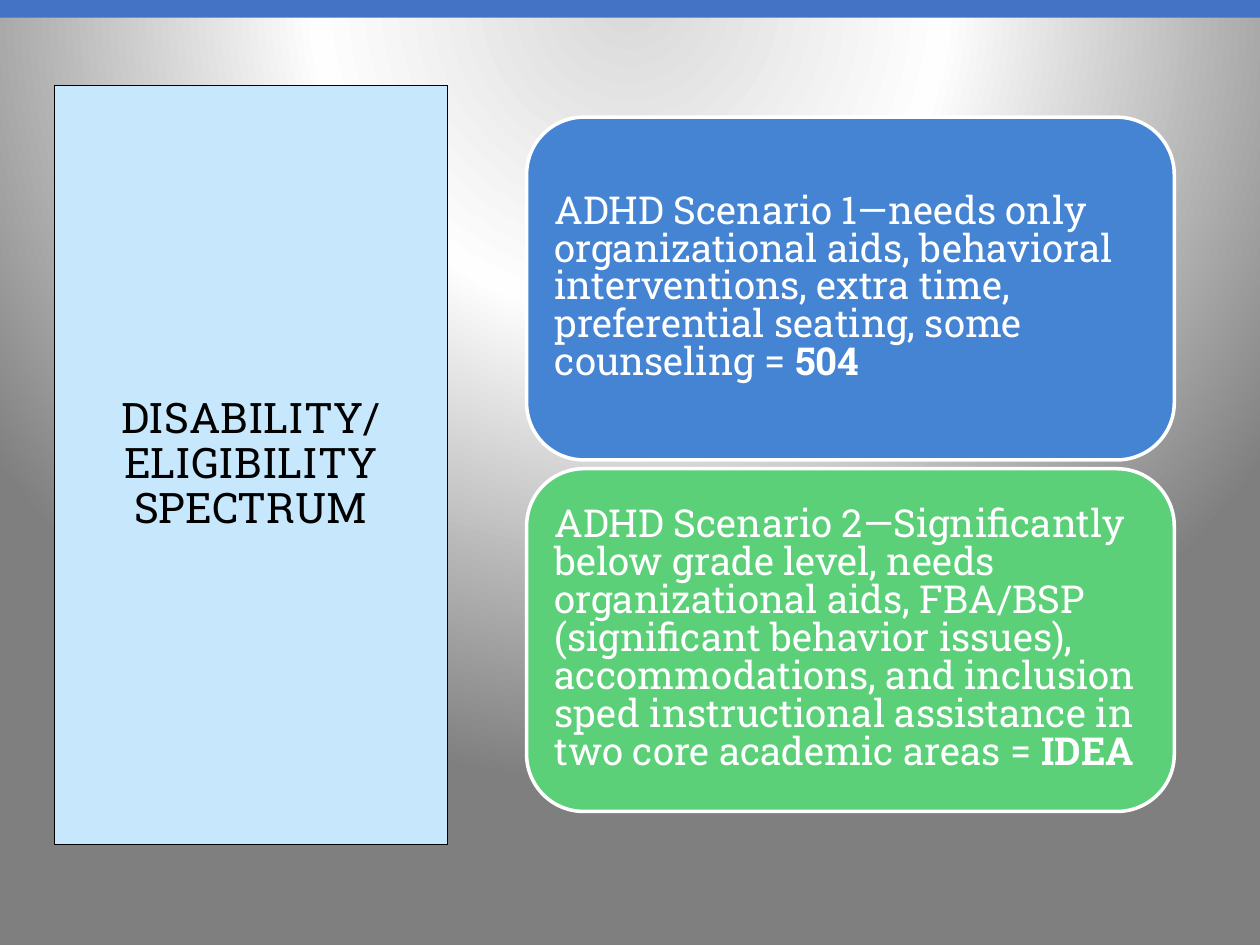
import pptx
import pptx.util
import pptx.dml.color
import pptx.enum.shapes
import pptx.enum.text
import pptx.oxml
from pptx.util import Inches

RGBColor = pptx.dml.color.RGBColor
BLACK = RGBColor(0x00, 0x00, 0x00)
WHITE = RGBColor(0xFF, 0xFF, 0xFF)
PALE_BLUE = RGBColor(0xC6, 0xE7, 0xFC)
BAR_BLUE = RGBColor(0x44, 0x72, 0xC4)
CARD_BLUE = RGBColor(0x45, 0x84, 0xD3)
CARD_GREEN = RGBColor(0x5B, 0xD0, 0x78)
GRADIENT = [(0, RGBColor(0xD9, 0xD9, 0xD9)), (40, RGBColor(0xFE, 0xFE, 0xFE)),
            (100, RGBColor(0x7F, 0x7F, 0x7F))]

SHAPES = pptx.enum.shapes.MSO_SHAPE
ALIGN = pptx.enum.text.PP_ALIGN
ANCHOR = pptx.enum.text.MSO_ANCHOR
AUTO_SIZE = pptx.enum.text.MSO_AUTO_SIZE

CARD_TOP, CARD_PITCH = 0.93, 2.79
CARDS = [
    (CARD_BLUE, "ADHD Scenario 1—needs only organizational aids, behavioral "
     "interventions, extra time, preferential seating, some counseling = ", "504"),
    (CARD_GREEN, "ADHD Scenario 2—Significantly below grade level, needs "
     "organizational aids, FBA/BSP (significant behavior issues), accommodations, "
     "and inclusion sped instructional assistance in two core academic areas = ",
     "IDEA"),
]


def apply(target, formats):
    for name, value in formats.items():
        setattr(target, name, value)


class SlideBuilder:
    font = "Roboto Slab"
    frame = {"word_wrap": True, "auto_size": AUTO_SIZE.NONE,
             "vertical_anchor": ANCHOR.MIDDLE,
             "margin_left": Inches(0.09), "margin_right": Inches(0.09),
             "margin_top": Inches(0.09), "margin_bottom": Inches(0.09)}

    def __init__(self, s):
        self.s = s

    def background(self, stops):
        gs = "".join(f'<a:gs pos="{pos * 1000}"><a:srgbClr val="{color}"/></a:gs>'
                     for pos, color in stops)
        bg = pptx.oxml.parse_xml(
            '<p:bg xmlns:p="http://schemas.openxmlformats.org/presentationml/2006/main" '
            'xmlns:a="http://schemas.openxmlformats.org/drawingml/2006/main">'
            f'<p:bgPr><a:gradFill rotWithShape="1"><a:gsLst>{gs}</a:gsLst>'
            '<a:path path="circle"><a:fillToRect l="50000" t="-80000" r="50000" '
            'b="180000"/></a:path></a:gradFill><a:effectLst/></p:bgPr></p:bg>')
        self.s.element.cSld.insert(0, bg)

    def paint(self, sp, fill, line=None, width=0):
        sp.fill.solid()
        sp.fill.fore_color.rgb = fill
        if line is None:
            sp.line.fill.background()
        else:
            sp.line.color.rgb = line
            sp.line.width = pptx.util.Pt(width)

    def shape(self, kind, box, fill, line=None, width=0):
        sp = self.s.shapes.add_shape(kind, *map(Inches, box))
        sp.shadow.inherit = False
        self.paint(sp, fill, line, width)
        return sp

    def run(self, p, text, size, color, bold=False):
        r = p.add_run()
        r.text = text
        apply(r.font, {"name": self.font, "size": pptx.util.Pt(size), "bold": bold})
        r.font.color.rgb = color

    def title(self, box, lines):
        sp = self.s.shapes.title
        apply(sp, dict(zip(("left", "top", "width", "height"), map(Inches, box))))
        self.paint(sp, PALE_BLUE, BLACK, 0.75)
        apply(sp.text_frame, self.frame)
        p = sp.text_frame.paragraphs[0]
        apply(p, {"alignment": ALIGN.CENTER, "line_spacing": 0.9})
        for i, line in enumerate(lines):
            if i:
                p.add_line_break()
            self.run(p, line, 24, BLACK)

    def card(self, box, fill, text, result):
        sp = self.shape(SHAPES.ROUNDED_RECTANGLE, box, fill, WHITE, 2)
        apply(sp.text_frame, self.frame)
        p = sp.text_frame.paragraphs[0]
        apply(p, {"alignment": ALIGN.LEFT, "line_spacing": 0.82})
        self.run(p, text, 22, WHITE)
        self.run(p, result, 22, WHITE, bold=True)


def main():
    prs = pptx.Presentation()
    apply(prs, {"slide_width": Inches(10), "slide_height": Inches(7.5)})
    b = SlideBuilder(prs.slides.add_slide(prs.slide_layouts[5]))
    b.background(GRADIENT)
    b.title((0.43, 0.68, 3.12, 6.02), ["DISABILITY/", "ELIGIBILITY SPECTRUM"])
    b.shape(SHAPES.RECTANGLE, (0, 0, 10, 0.14), BAR_BLUE)
    for i, (fill, text, result) in enumerate(CARDS):
        b.card((4.18, CARD_TOP + i * CARD_PITCH, 5.14, 2.72), fill, text, result)
    prs.save("out.pptx")


if __name__ == "__main__":
    main()
